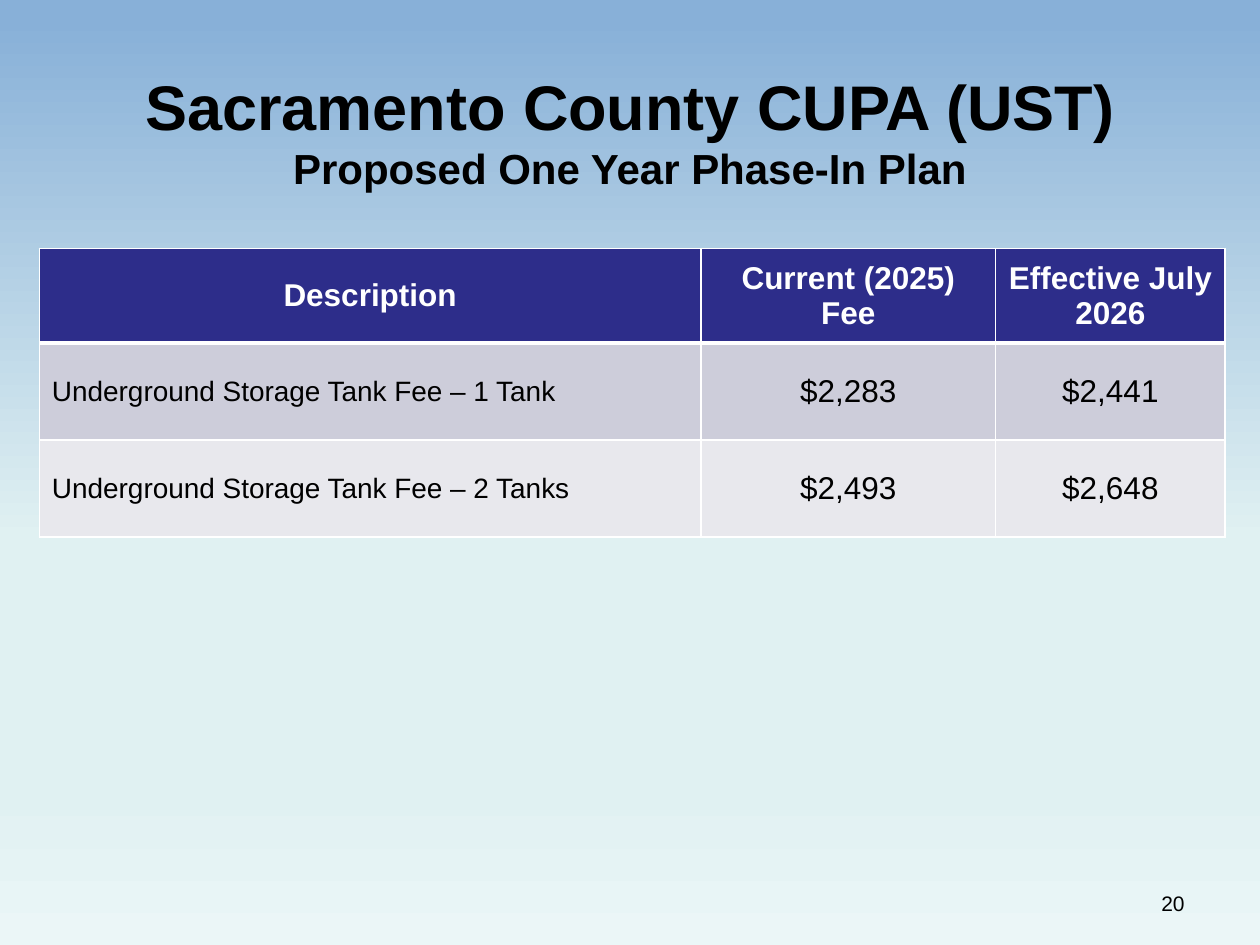
import dataclasses

import lxml.etree
import pptx
import pptx.dml.color
import pptx.enum.text
import pptx.oxml.ns
import pptx.util

Pt = pptx.util.Pt
ALIGN = pptx.enum.text.PP_ALIGN
MIDDLE = pptx.enum.text.MSO_ANCHOR.MIDDLE
qn = pptx.oxml.ns.qn

BLACK = "000000"
WHITE = "FFFFFF"
NAVY = "2D2D8A"
BACKGROUND_STOPS = [
    (0, "88B0D8"), (2, "88B0D8"), (57, "E0F1F2"), (83, "E0F1F2"), (100, "EBF6F7"),
]
COLUMN_WIDTHS = [378, 168.5, 131]


@dataclasses.dataclass
class FeeRow:
    texts: list[str]
    height: float
    fill: str
    color: str = BLACK
    bold: bool = False
    label_size: float = 16
    label_align: ALIGN = ALIGN.LEFT
    top_border: float = 1
    bottom_border: float = 1


FEE_ROWS = [
    FeeRow(["Description", "Current (2025) Fee", "Effective July 2026"], 54, NAVY,
           color=WHITE, bold=True, label_size=18, label_align=ALIGN.CENTER,
           bottom_border=3),
    FeeRow(["Underground Storage Tank Fee – 1 Tank", "$2,283", "$2,441"],
           55.5, "CDCDDA", top_border=3),
    FeeRow(["Underground Storage Tank Fee – 2 Tanks", "$2,493", "$2,648"],
           55.5, "E8E8ED"),
]


def rgb(value: str) -> pptx.dml.color.RGBColor:
    return pptx.dml.color.RGBColor.from_string(value)


def add_span(para, text: str, *, size: float, color: str = BLACK,
             bold: bool = False, align: ALIGN = ALIGN.CENTER) -> None:
    para.alignment = align
    span = para.add_run()
    span.text = text
    span.font.name = "Arial"
    span.font.size = Pt(size)
    span.font.bold = bold
    span.font.color.rgb = rgb(color)


def paint_background(page) -> None:
    fill = page.background.fill
    fill.gradient()
    fill.gradient_angle = 270
    stop_list = next(page.element.iter(qn("a:gsLst")))
    for stop in list(stop_list):
        stop_list.remove(stop)
    for percent, color in BACKGROUND_STOPS:
        stop = lxml.etree.SubElement(stop_list, qn("a:gs"), pos=str(percent * 1000))
        lxml.etree.SubElement(stop, qn("a:srgbClr"), val=color)


def add_border(cell, side: str, width: float) -> None:
    properties = cell._tc.get_or_add_tcPr()
    line = lxml.etree.SubElement(properties, qn(f"a:ln{side}"), w=str(Pt(width)))
    fill = lxml.etree.SubElement(line, qn("a:solidFill"))
    lxml.etree.SubElement(fill, qn("a:srgbClr"), val=WHITE)


def write_title(page) -> None:
    title = page.shapes.title
    title.left, title.top, title.width, title.height = Pt(36), Pt(29.5), Pt(648), Pt(90)
    frame = title.text_frame
    frame.word_wrap = True
    frame.auto_size = pptx.enum.text.MSO_AUTO_SIZE.NONE
    frame.vertical_anchor = MIDDLE
    para = frame.paragraphs[0]
    add_span(para, "Sacramento County CUPA (UST)", size=36, bold=True)
    para.add_line_break()
    add_span(para, "Proposed One Year Phase-In Plan", size=24, bold=True)


def write_page_number(page) -> None:
    box = page.shapes.add_textbox(Pt(516), Pt(504), Pt(168), Pt(24.5))
    frame = box.text_frame
    frame.word_wrap = True
    frame.vertical_anchor = MIDDLE
    add_span(frame.paragraphs[0], "20", size=12, align=ALIGN.RIGHT)


def draw_row(table, index: int, row: FeeRow) -> None:
    table.rows[index].height = Pt(row.height)
    for column, text in enumerate(row.texts):
        is_label = column == 0
        cell = table.cell(index, column)
        cell.vertical_anchor = MIDDLE
        add_span(cell.text_frame.paragraphs[0], text,
                 size=row.label_size if is_label else 18,
                 color=row.color, bold=row.bold,
                 align=row.label_align if is_label else ALIGN.CENTER)
        for side, width in zip("LRTB", (1, 1, row.top_border, row.bottom_border)):
            add_border(cell, side, width)
        cell.fill.solid()
        cell.fill.fore_color.rgb = rgb(row.fill)


def draw_table(page) -> None:
    height = sum(row.height for row in FEE_ROWS)
    table = page.shapes.add_table(
        len(FEE_ROWS), len(COLUMN_WIDTHS), Pt(22.5), Pt(142),
        Pt(sum(COLUMN_WIDTHS)), Pt(height)).table
    for column, width in zip(table.columns, COLUMN_WIDTHS):
        column.width = Pt(width)
    for index, row in enumerate(FEE_ROWS):
        draw_row(table, index, row)


def main() -> None:
    deck = pptx.Presentation()
    deck.slide_width, deck.slide_height = Pt(720), Pt(540)
    page = deck.slides.add_slide(deck.slide_layouts[5])
    paint_background(page)
    write_title(page)
    write_page_number(page)
    draw_table(page)
    deck.save("out.pptx")


if __name__ == "__main__":
    main()
